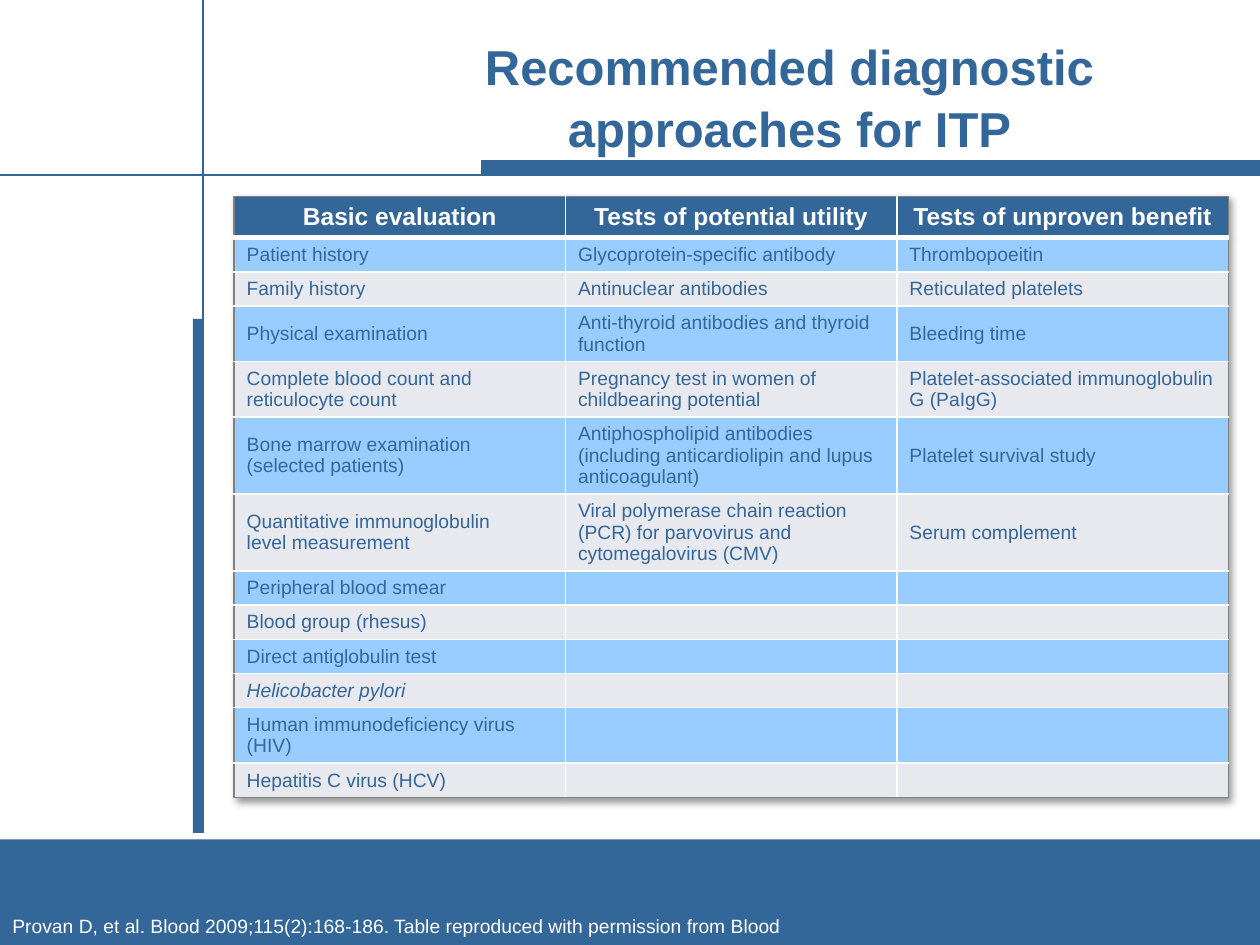
from lxml import etree
from pptx import Presentation
from pptx.dml.color import RGBColor
from pptx.enum.shapes import MSO_CONNECTOR, MSO_SHAPE
from pptx.enum.text import MSO_ANCHOR, MSO_AUTO_SIZE, PP_ALIGN
from pptx.oxml import parse_xml
from pptx.oxml.ns import nsdecls, qn
from pptx.util import Cm, Pt

RECTANGLE = MSO_SHAPE.RECTANGLE
STRAIGHT = MSO_CONNECTOR.STRAIGHT
MIDDLE = MSO_ANCHOR.MIDDLE
CENTER = PP_ALIGN.CENTER
FIXED_SIZE = MSO_AUTO_SIZE.NONE

BLUE = RGBColor(0x33, 0x66, 0x99)
SKY = RGBColor(0x99, 0xCC, 0xFF)
PALE = RGBColor(0xE8, 0xE8, 0xEF)
GREY = RGBColor(0x80, 0x80, 0x80)
WHITE = RGBColor(0xFF, 0xFF, 0xFF)

HEADINGS = ["Basic evaluation", "Tests of potential utility", "Tests of unproven benefit"]
BASIC = [
    "Patient history",
    "Family history",
    "Physical examination",
    "Complete blood count and reticulocyte count",
    "Bone marrow examination (selected patients)",
    "Quantitative immunoglobulin \vlevel measurement",
    "Peripheral blood smear",
    "Blood group (rhesus)",
    "Direct antiglobulin test",
    "Helicobacter pylori",
    "Human immunodeficiency virus (HIV)",
    "Hepatitis C virus (HCV)",
]
POTENTIAL = [
    "Glycoprotein-specific antibody",
    "Antinuclear antibodies",
    "Anti-thyroid antibodies and thyroid function",
    "Pregnancy test in women of childbearing potential",
    "Antiphospholipid antibodies (including anticardiolipin and lupus anticoagulant)",
    "Viral polymerase chain reaction (PCR) for parvovirus and cytomegalovirus (CMV)",
]
UNPROVEN = [
    "Thrombopoeitin",
    "Reticulated platelets",
    "Bleeding time",
    "Platelet-associated immunoglobulin G (PaIgG)",
    "Platelet survival study",
    "Serum complement",
]
LINES_PER_ROW = [1, 1, 2, 2, 3, 3, 1, 1, 1, 1, 2, 1]


def style_font(paragraph, size, color, bold=False):
    font = paragraph.font
    font.name, font.size, font.bold = "Arial", Pt(size), bold
    font.color.rgb = color


def set_borders(cell, borders):
    """Take (color, points) pairs in the order left, right, top, bottom."""
    properties = cell._tc.get_or_add_tcPr()
    for position, (side, (color, width)) in enumerate(zip("LRTB", borders)):
        properties.insert(position, parse_xml(
            f'<a:ln{side} {nsdecls("a")} w="{Pt(width)}"><a:solidFill>'
            f'<a:srgbClr val="{color}"/></a:solidFill></a:ln{side}>'))


prs = Presentation()
prs.slide_width, prs.slide_height = Cm(25.4), Cm(19.05)
slide = prs.slides.add_slide(prs.slide_layouts[5])
shapes = slide.shapes

# Footer band, side bar and title bar
bars = [(0, 16.92, 25.4, 2.13), (3.89, 6.43, 0.2, 10.36), (9.7, 3.23, 15.7, 0.3)]
for box in bars:
    bar = shapes.add_shape(RECTANGLE, *map(Cm, box))
    bar.shadow.inherit = False
    bar.fill.solid()
    bar.fill.fore_color.rgb = BLUE
    bar.line.fill.background()

rules = [(4.09, 0, 4.09, 16.79), (0, 3.53, 25.4, 3.53)]
for ends in rules:
    rule = shapes.add_connector(STRAIGHT, *map(Cm, ends))
    rule.line.color.rgb = BLUE
    rule.line.width = Pt(1)
    etree.SubElement(rule._element.spPr, qn("a:effectLst"))

title = shapes.title
title.left, title.top, title.width, title.height = Cm(6.91), Cm(1.12), Cm(18.01), Cm(1.6)
title.text_frame.text = "Recommended diagnostic approaches for ITP"
title.text_frame.auto_size = FIXED_SIZE
title.text_frame.vertical_anchor = MIDDLE
heading = title.text_frame.paragraphs[0]
heading.alignment = CENTER
heading.line_spacing = 1.05
style_font(heading, 28, BLUE, bold=True)

# Diagnostic tests
row_heights = [0.83] + [0.26 + 0.43 * lines for lines in LINES_PER_ROW]
row_count, column_count = len(row_heights), len(HEADINGS)
frame = shapes.add_table(row_count, column_count, Cm(4.72), Cm(3.96),
                         Cm(6.68 * column_count), Cm(sum(row_heights)))
table = frame.table
table._tbl.tblPr.insert(0, parse_xml(
    f'<a:effectLst {nsdecls("a")}><a:outerShdw blurRad="50800" dist="38100" dir="2700000" '
    'algn="tl" rotWithShape="0"><a:srgbClr val="000000"><a:alpha val="40000"/></a:srgbClr>'
    '</a:outerShdw></a:effectLst>'))
for column in table.columns:
    column.width = Cm(6.68)
for row, height in zip(table.rows, row_heights):
    row.height = Cm(height)

outer, inner, under_header = (GREY, 1), (WHITE, 1), (WHITE, 3)
for c, tests in enumerate([BASIC, POTENTIAL, UNPROVEN]):
    blanks = [""] * (row_count - 1 - len(tests))
    for r, wording in enumerate([HEADINGS[c]] + tests + blanks):
        cell = table.cell(r, c)
        cell.text = wording
        paragraph = cell.text_frame.paragraphs[0]
        cell.fill.solid()
        if r == 0:
            cell.fill.fore_color.rgb = BLUE
            paragraph.alignment = CENTER
            style_font(paragraph, 14, WHITE, bold=True)
        else:
            cell.fill.fore_color.rgb = SKY if r % 2 else PALE
            cell.vertical_anchor = MIDDLE
            style_font(paragraph, 11, BLUE)
        if wording == "Helicobacter pylori":
            paragraph.font.italic = True
        if not wording:
            etree.SubElement(paragraph._p, qn("a:endParaRPr"), sz="1100")
        left = outer if c == 0 else inner
        right = outer if c == column_count - 1 else inner
        top = outer if r == 0 else under_header if r == 1 else inner
        bottom = under_header if r == 0 else outer if r == row_count - 1 else inner
        set_borders(cell, [left, right, top, bottom])

citation = shapes.add_textbox(Cm(0), Cm(18.31), Cm(25.4), Cm(0.74)).text_frame
citation.word_wrap = True
citation.text = ("Provan D, et al. Blood 2009;115(2):168-186. "
                 "Table reproduced with permission from Blood")
style_font(citation.paragraphs[0], 11, WHITE)

prs.save("out.pptx")
